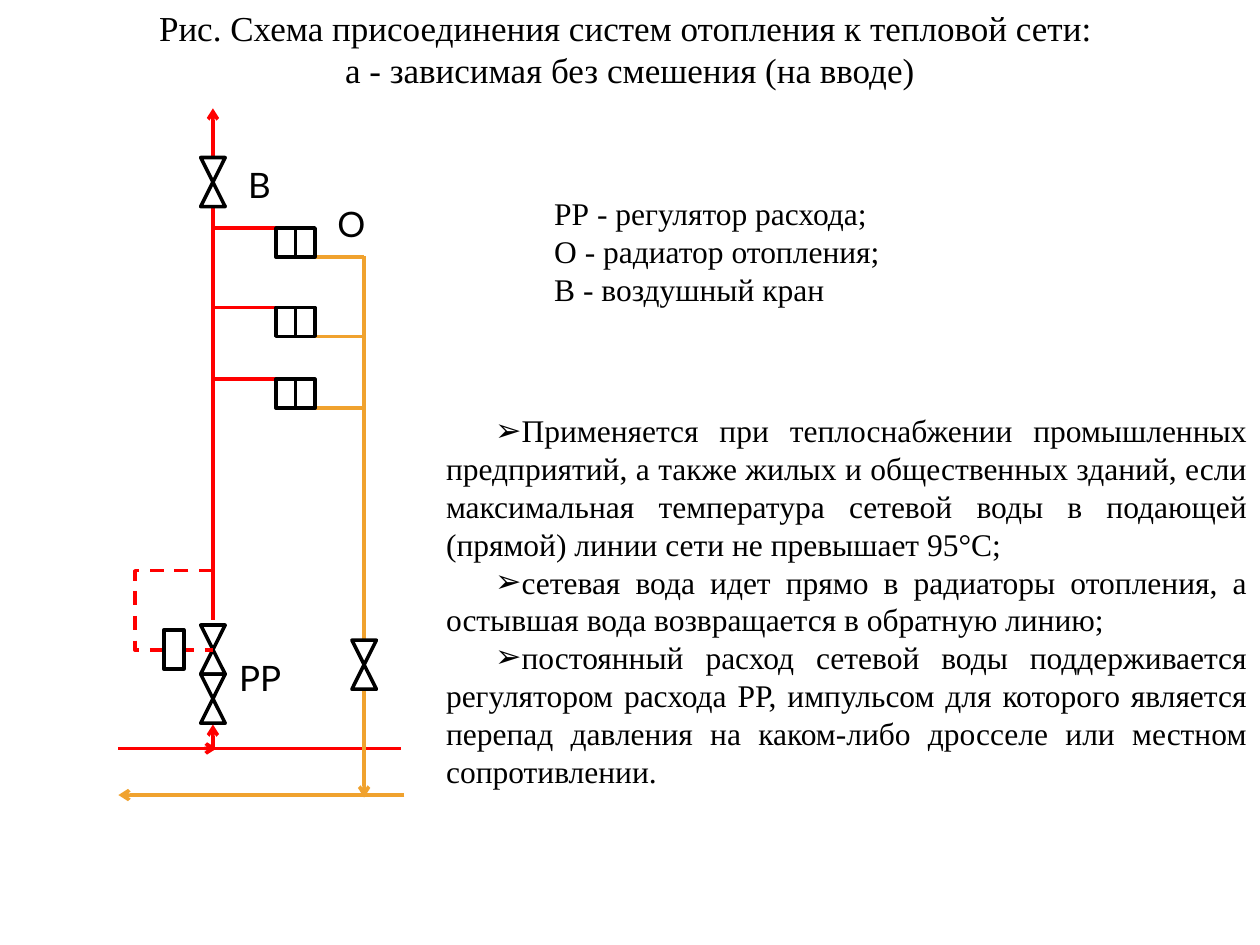
from dataclasses import dataclass

from lxml.etree import SubElement
from pptx import Presentation
from pptx.dml.color import RGBColor
from pptx.enum.dml import MSO_LINE_DASH_STYLE as Dash
from pptx.enum.shapes import MSO_CONNECTOR_TYPE as Connector, MSO_SHAPE as Shape
from pptx.enum.text import MSO_ANCHOR as Anchor, MSO_AUTO_SIZE as AutoSize, PP_ALIGN as Align
from pptx.oxml.ns import qn
from pptx.util import Inches, Pt


@dataclass(frozen=True)
class Theme:
    """Colours, fonts, type sizes and stroke of the slide."""
    ink: RGBColor = RGBColor(0, 0, 0)
    paper: RGBColor = RGBColor(255, 255, 255)
    supply: RGBColor = RGBColor(255, 0, 0)
    back: RGBColor = RGBColor(0xF0, 0xA2, 0x2E)
    serif: str = "Times New Roman"
    sans: str = "Lato"
    large: Pt = Pt(20)
    normal: Pt = Pt(18)
    stroke: Pt = Pt(2)


THEME = Theme()
COLUMNS, ROWS = 100, 75
WIDTH, HEIGHT = Inches(10), Inches(7.5)
SUPPLY_X, RETURN_X = 16.9, 28.9
SUPPLY_Y, RETURN_Y = 59.4, 63.1
RADIATOR_ROWS = (18.1, 24.4, 30.1)
RADIATOR_LEFT, RADIATOR_WIDTH, RADIATOR_HEIGHT = 21.9, 3.1, 2.3
VALVE_SIZE = 1.95
IMPULSE_TOP, IMPULSE_BOTTOM = 45.3, 51.6

TITLE = [
    "Рис. Схема присоединения систем отопления к тепловой сети: ",
    "а - зависимая без смешения (на вводе)",
]
LEGEND = ["РР - регулятор расхода;", "О - радиатор отопления;", "В - воздушный кран"]
NOTES = [
    "Применяется при теплоснабжении промышленных предприятий, а также жилых и "
    "общественных зданий, если максимальная температура сетевой воды в подающей "
    "(прямой) линии сети не превышает 95°С; ",
    "сетевая вода идет прямо в радиаторы отопления, а остывшая вода возвращается "
    "в обратную линию;",
    "постоянный расход сетевой воды поддерживается регулятором расхода РР, импульсом "
    "для которого является перепад давления на каком-либо дросселе или местном "
    "сопротивлении.",
]


def across(columns):
    """Turn grid columns into a length."""
    return round(WIDTH * columns / COLUMNS)


def down(rows):
    """Turn grid rows into a length."""
    return round(HEIGHT * rows / ROWS)


def place(left, top, width, height):
    """Turn a grid rectangle into four lengths."""
    return across(left), down(top), across(width), down(height)


def add_bullet(para):
    """Give a paragraph an arrow bullet and a first-line indent."""
    props = para._p.get_or_add_pPr()
    props.set("marL", "0")
    props.set("indent", str(across(3.9)))
    SubElement(props, qn("a:buChar")).set("char", "➢")


def write(box, lines, font, size, align=Align.LEFT, anchor=Anchor.TOP, wrap=True, bullets=False):
    """Fill a text container with formatted paragraphs."""
    frame = box.text_frame
    frame.text = "\n".join(lines)
    frame.word_wrap = wrap
    frame.auto_size = AutoSize.NONE
    frame.vertical_anchor = anchor
    for para in frame.paragraphs:
        para.alignment = align
        para.space_before = Pt(0)
        if bullets:
            add_bullet(para)
        for span in para.runs:
            span.font.name = font
            span.font.size = size
            span.font.color.rgb = THEME.ink


def fill_placeholder(box, area, lines, size, **layout):
    """Move a placeholder to its area and write its text."""
    box.left, box.top, box.width, box.height = place(*area)
    write(box, lines, THEME.serif, size, **layout)


def add_label(page, area, lines, font, size, wrap=False):
    """Add a text box."""
    write(page.shapes.add_textbox(*place(*area)), lines, font, size, wrap=wrap)


def add_pipe(shapes, start, end, color, arrow=False, dashed=False):
    """Add a straight pipe between two grid points."""
    pipe = shapes.add_connector(
        Connector.STRAIGHT, across(start[0]), down(start[1]), across(end[0]), down(end[1]))
    pipe.line.color.rgb = color
    pipe.line.width = THEME.stroke
    if dashed:
        pipe.line.dash_style = Dash.DASH
    if arrow:
        SubElement(pipe.line._get_or_add_ln(), qn("a:tailEnd")).set("type", "arrow")
    SubElement(pipe._element.spPr, qn("a:effectLst"))


def add_part(shapes, kind, area, filled=True, rotation=0):
    """Add an outlined part of the equipment."""
    part = shapes.add_shape(kind, *place(*area))
    part.shadow.inherit = False
    part.rotation = rotation
    part.line.color.rgb = THEME.ink
    part.line.width = THEME.stroke
    if filled:
        part.fill.solid()
        part.fill.fore_color.rgb = THEME.paper
    else:
        part.fill.background()


def add_valve(page, center, top):
    """Add a valve of two triangles that meet at their tips."""
    shapes = page.shapes.add_group_shape().shapes
    left = center - VALVE_SIZE / 2
    for step, rotation in enumerate((180, 0)):
        area = (left, top + step * VALVE_SIZE, VALVE_SIZE, VALVE_SIZE)
        add_part(shapes, Shape.ISOSCELES_TRIANGLE, area, rotation=rotation)


def add_radiator(page, top):
    """Add a two-section radiator with its inlet and outlet pipes."""
    bottom, middle = top + RADIATOR_HEIGHT, RADIATOR_LEFT + RADIATOR_WIDTH / 2
    right = RADIATOR_LEFT + RADIATOR_WIDTH
    add_pipe(page.shapes, (RADIATOR_LEFT, top), (SUPPLY_X, top), THEME.supply)
    add_pipe(page.shapes, (RETURN_X, bottom), (right, bottom), THEME.back)
    shapes = page.shapes.add_group_shape().shapes
    area = (RADIATOR_LEFT, top, RADIATOR_WIDTH, RADIATOR_HEIGHT)
    add_part(shapes, Shape.RECTANGLE, area, filled=False)
    add_pipe(shapes, (middle, top), (middle, bottom), THEME.ink)


def add_impulse_line(page):
    """Add the dashed impulse line and the regulator drive."""
    corners = [(10.7, IMPULSE_TOP), (10.7, IMPULSE_BOTTOM), (13.2, IMPULSE_BOTTOM)]
    builder = page.shapes.build_freeform(across(SUPPLY_X), down(IMPULSE_TOP))
    builder.add_line_segments([(across(x), down(y)) for x, y in corners], close=False)
    route = builder.convert_to_shape()
    route.shadow.inherit = False
    route.fill.background()
    route.line.color.rgb = THEME.supply
    route.line.width = THEME.stroke
    route.line.dash_style = Dash.DASH
    add_pipe(page.shapes, (14.3, IMPULSE_BOTTOM), (SUPPLY_X, IMPULSE_BOTTOM),
             THEME.supply, dashed=True)
    add_part(page.shapes, Shape.RECTANGLE, (13, 50, 1.6, 3.1))


def add_scheme(page):
    """Draw the mains, risers, radiators, valves and labels."""
    pipes = [
        ((SUPPLY_X, 49.2), (SUPPLY_X, 8.6), THEME.supply, True),
        ((9.4, SUPPLY_Y), (17.2, SUPPLY_Y), THEME.supply, True),
        ((SUPPLY_X, SUPPLY_Y), (31.8, SUPPLY_Y), THEME.supply, False),
        ((SUPPLY_X, SUPPLY_Y), (SUPPLY_X, 57.5), THEME.supply, True),
        ((RETURN_X, 20.3), (RETURN_X, 63.3), THEME.back, True),
        ((32.1, RETURN_Y), (9.4, RETURN_Y), THEME.back, True),
    ]
    for start, end, color, arrow in pipes:
        add_pipe(page.shapes, start, end, color, arrow)
    for top in RADIATOR_ROWS:
        add_radiator(page, top)
    for center, top in [(SUPPLY_X, 12.5), (SUPPLY_X, 49.6), (SUPPLY_X, 53.5), (RETURN_X, 50.8)]:
        add_valve(page, center, top)
    add_impulse_line(page)
    for text, left, top, width in [("О", 25.8, 15.6, 3.9), ("В", 18.7, 12.5, 3.9),
                                   ("РР", 18, 51.6, 5.5)]:
        add_label(page, (left, top, width, 4.4), [text], THEME.sans, THEME.large)


def main():
    """Build and save the slide."""
    deck = Presentation()
    deck.slide_width, deck.slide_height = WIDTH, HEIGHT
    page = deck.slides.add_slide(deck.slide_layouts[1])
    fill_placeholder(page.shapes.title, (0, 0, COLUMNS, 7.7), TITLE, THEME.large,
                     align=Align.CENTER)
    fill_placeholder(page.placeholders[1], (34.4, 32, 65.6, 31.3), NOTES, THEME.normal,
                     align=Align.JUSTIFY, anchor=Anchor.MIDDLE, bullets=True)
    add_label(page, (43, 14.9, 30.5, 10.1), LEGEND, THEME.serif, THEME.normal, wrap=True)
    add_scheme(page)
    deck.save("out.pptx")


if __name__ == "__main__":
    main()
